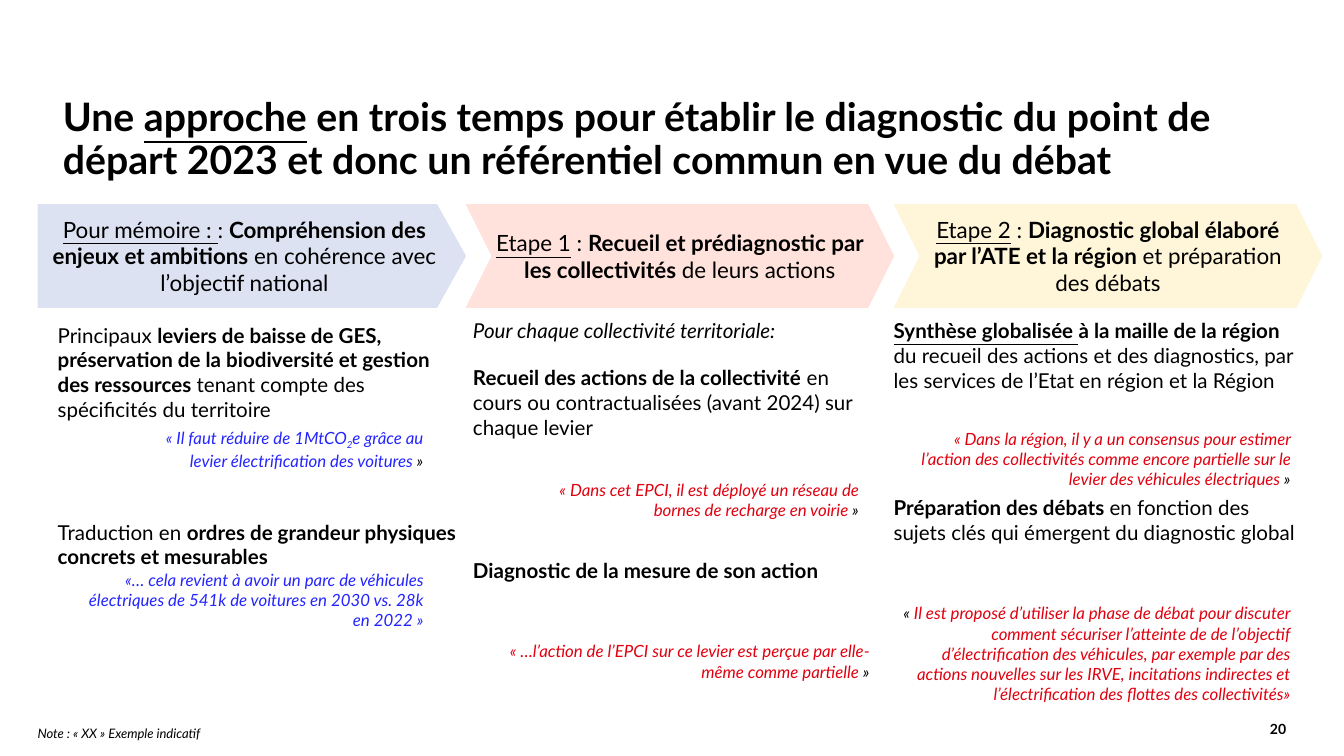
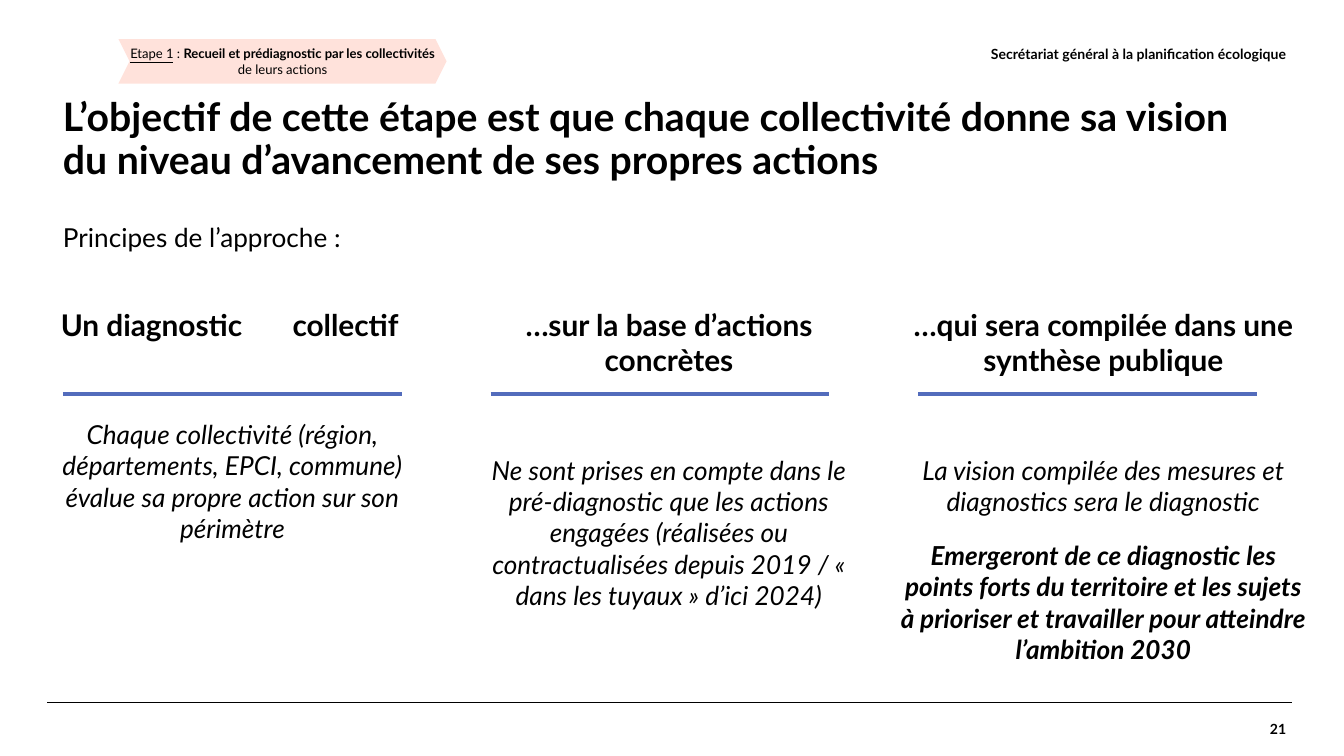
from dataclasses import dataclass
from typing import NamedTuple

from lxml import etree
from pptx import Presentation
from pptx.dml.color import RGBColor
from pptx.enum.shapes import MSO_CONNECTOR, MSO_SHAPE
from pptx.enum.text import MSO_ANCHOR, PP_ALIGN
from pptx.oxml.ns import qn
from pptx.util import Cm, Pt

LEFT, CENTER, RIGHT = PP_ALIGN.LEFT, PP_ALIGN.CENTER, PP_ALIGN.RIGHT
TOP, MIDDLE = MSO_ANCHOR.TOP, MSO_ANCHOR.MIDDLE
PENTAGON, CHEVRON = MSO_SHAPE.PENTAGON, MSO_SHAPE.CHEVRON
STRAIGHT = MSO_CONNECTOR.STRAIGHT

FONT = "Lato"
COLORS = {
    "ink": "000000",
    "national": "2424FF",
    "local": "E1000F",
    "rule": "536CBC",
    "lavender": "DDE2F2",
    "pink": "FFE2DB",
    "cream": "FFF5D9",
}
NO_MARGINS = (0, 0, 0, 0)


class Box(NamedTuple):
    left: float
    top: float
    width: float
    height: float


class Span(NamedTuple):
    text: str
    bold: bool = False
    italic: bool = False
    underline: bool = False
    color: str = "ink"
    subscript: bool = False


@dataclass(frozen=True)
class Block:
    spans: tuple[Span, ...]
    size: float
    align: PP_ALIGN = LEFT
    before: float = 0
    after: float = 0
    line_spacing: float | None = None
    tabs: tuple[float, ...] = ()


@dataclass(frozen=True)
class Phase:
    box: Box
    geometry: MSO_SHAPE
    adjustment: float
    fill: str
    spans: tuple[Span, ...]
    size: float = 12
    margins: tuple[float, ...] = (0, 0.13, 0, 0.13)


@dataclass(frozen=True)
class TextColumn:
    box: Box
    blocks: tuple[Block, ...]


def color(name: str) -> RGBColor:
    return RGBColor.from_string(COLORS[name])


def quote(text: str, tint: str) -> Span:
    return Span(text, italic=True, color=tint)


def body(*spans: Span, before: float = 0) -> Block:
    return Block(spans, 11, before=before, after=8)


def heading(text: str, **layout) -> Block:
    return Block((Span(text, bold=True),), 16, **{"align": CENTER, "after": 8, **layout})


def principle(text: str, bold: bool = False, before: float = 32.8) -> Block:
    return Block((Span(text, bold, True),), 14, CENTER, before, 8)


def write(paragraph, text: str, *, size: float, bold: bool = False, italic: bool = False,
          underline: bool = False, tint: str = "ink", subscript: bool = False) -> None:
    run = paragraph.add_run()
    run.text = text
    font = run.font
    font.name, font.size = FONT, Pt(size)
    font.bold, font.italic, font.underline = bold, italic, underline
    font.color.rgb = color(tint)
    if subscript:
        run._r.get_or_add_rPr().set("baseline", "-25000")


def fill_frame(frame, blocks: tuple[Block, ...], anchor: MSO_ANCHOR = TOP,
               margins: tuple[float, ...] = NO_MARGINS) -> None:
    frame.word_wrap = True
    frame.vertical_anchor = anchor
    (frame.margin_left, frame.margin_top,
     frame.margin_right, frame.margin_bottom) = map(Cm, margins)
    for index, block in enumerate(blocks):
        paragraph = frame.add_paragraph() if index else frame.paragraphs[0]
        paragraph.alignment = block.align
        paragraph.space_before, paragraph.space_after = Pt(block.before), Pt(block.after)
        if block.line_spacing:
            paragraph.line_spacing = block.line_spacing
        if block.tabs:
            tab_list = etree.SubElement(paragraph._p.get_or_add_pPr(), qn("a:tabLst"))
            for position in block.tabs:
                etree.SubElement(tab_list, qn("a:tab"), pos=str(Cm(position)), algn="l")
        for span in block.spans:
            write(paragraph, span.text, size=block.size, bold=span.bold, italic=span.italic,
                  underline=span.underline, tint=span.color, subscript=span.subscript)


def add_text(slide, box: Box, *blocks: Block, anchor: MSO_ANCHOR = TOP,
             margins: tuple[float, ...] = NO_MARGINS) -> None:
    shape = slide.shapes.add_textbox(*map(Cm, box))
    fill_frame(shape.text_frame, blocks, anchor, margins)


def add_phase(slide, phase: Phase) -> None:
    shape = slide.shapes.add_shape(phase.geometry, *map(Cm, phase.box))
    shape.shadow.inherit = False
    shape.adjustments[0] = phase.adjustment
    shape.fill.solid()
    shape.fill.fore_color.rgb = color(phase.fill)
    shape.line.fill.background()
    fill_frame(shape.text_frame, (Block(phase.spans, phase.size, CENTER),),
               MIDDLE, phase.margins)


def add_rule(slide, left: float, top: float, width: float, tint: str, weight: float) -> None:
    rule = slide.shapes.add_connector(STRAIGHT, Cm(left), Cm(top), Cm(left + width), Cm(top))
    rule.line.color.rgb = color(tint)
    rule.line.width = Pt(weight)
    etree.SubElement(rule._element.spPr, qn("a:effectLst"))


def add_title(slide, width: float, *spans: Span) -> None:
    add_text(slide, Box(0.89, 1.9, width, 1.5), Block(spans, 21, line_spacing=0.9),
             anchor=MIDDLE, margins=(0.3, 0.13, 0.25, 0.13))


def add_label(slide, box: Box, text: str) -> None:
    add_text(slide, box, Block((Span(text, bold=True),), 7.5, RIGHT), anchor=MIDDLE)


def add_page_number(slide, number: int) -> None:
    add_label(slide, Box(20.55, 13.28, 3.76, 0.99), str(number))


def phase_box(index: int) -> Box:
    return Box(0.71 + 8.09 * index, 3.86, 8.1, 1.96)


STEP_ONE = (
    Span("Etape 1", underline=True),
    Span(" : "),
    Span("Recueil et prédiagnostic par les collectivités ", bold=True),
    Span("de leurs actions"),
)

PHASES = (
    Phase(phase_box(0), PENTAGON, 0.28, "lavender", (
        Span("Pour mémoire : ", underline=True),
        Span(": "),
        Span("Compréhension des enjeux et ambitions ", bold=True),
        Span("en cohérence avec l’objectif national"),
    ), margins=(0.1, 0.13, 0.1, 0.13)),
    Phase(phase_box(1), CHEVRON, 0.25, "pink", STEP_ONE),
    Phase(phase_box(2), CHEVRON, 0.25, "cream", (
        Span("Etape 2", underline=True),
        Span(" : "),
        Span("Diagnostic global élaboré par l’ATE et la région ", bold=True),
        Span("et préparation des débats"),
    ), margins=(0.25, 0.13, 0.25, 0.13)),
)

PHASE_COLUMNS = (
    TextColumn(Box(1.09, 6.1, 7.7, 5.59), (
        body(Span("Principaux "),
             Span("leviers de baisse de GES, préservation de la biodiversité et gestion "
                  "des ressources ", bold=True),
             Span("tenant compte des spécificités du territoire")),
        body(Span("Traduction en "),
             Span("ordres de grandeur physiques concrets et mesurables", bold=True),
             before=44.8),
    )),
    TextColumn(Box(8.94, 6.02, 7.49, 6.93), (
        body(Span("Pour chaque collectivité territoriale:", italic=True)),
        body(Span("Recueil des actions de la collectivité", bold=True),
             Span(" en cours ou contractualisées (avant 2024) sur chaque levier"),
             before=4),
        body(Span("Diagnostic de la mesure de son action", bold=True), before=55.6),
    )),
    TextColumn(Box(16.89, 6.02, 7.8, 5.59), (
        body(Span("Synthèse globalisée ", bold=True, underline=True),
             Span("à la maille de la région ", bold=True),
             Span("du recueil des actions et des diagnostics, par les services de l’Etat "
                  "en région et la Région")),
        body(Span("Préparation des débats ", bold=True),
             Span("en fonction des sujets clés qui émergent du diagnostic global"),
             before=47.2),
    )),
)

QUOTES = (
    (Box(2.74, 8.08, 5.26, 1.57), (
        quote("« Il faut réduire de 1MtCO", "national"),
        Span("2", italic=True, color="national", subscript=True),
        quote("e grâce au levier électrification des voitures", "national"),
        quote(" »", "ink"))),
    (Box(1.6, 10.77, 6.4, 1.57), (
        quote("«… cela revient à avoir un parc de véhicules électriques de 541k de voitures "
              "en 2030 vs. 28k en 2022 »", "national"),)),
    (Box(9.83, 9.07, 6.4, 1.07), (
        quote("« Dans cet EPCI, il est déployé un réseau de bornes de recharge en voirie ",
              "local"),
        quote("»", "ink"))),
    (Box(8.94, 12.12, 7.49, 1.17), (
        quote("« …l’action de l’EPCI sur ce levier est perçue par elle-même comme partielle",
              "local"),
        quote(" »", "ink"))),
    (Box(17.15, 8.1, 7.24, 1.57), (
        quote("« Dans la région, il y a un consensus pour estimer l’action des collectivités "
              "comme encore partielle sur le levier des véhicules électriques", "local"),
        quote(" »", "ink"))),
    (Box(16.99, 11.4, 7.39, 1.57), (
        quote("« ", "ink"),
        quote("Il est proposé d’utiliser la phase de débat pour discuter comment sécuriser "
              "l’atteinte de de l’objectif d’électrification des véhicules, par exemple par "
              "des actions nouvelles sur les IRVE, incitations indirectes et "
              "l’électrification des flottes des collectivités»", "local"))),
)

PRINCIPLE_COLUMNS = (
    TextColumn(Box(0.89, 5.79, 7.01, 8), (
        heading("\tUn diagnostic\tcollectif", align=LEFT, tabs=(0.26, 4.64)),
        principle("Chaque collectivité (région, départements, EPCI, commune) évalue "
                  "sa propre action sur son périmètre"),
    )),
    TextColumn(Box(9.14, 5.79, 7.01, 8), (
        heading("…sur la base d’actions concrètes"),
        principle("Ne sont prises en compte dans le pré-diagnostic que les actions engagées "
                  "(réalisées ou contractualisées depuis 2019 / « dans les tuyaux » "
                  "d’ici 2024)"),
    )),
    TextColumn(Box(17.02, 5.79, 7.67, 8), (
        heading("…qui sera compilée dans une synthèse publique"),
        principle("La vision compilée des mesures et diagnostics sera le diagnostic"),
        principle("Emergeront de ce diagnostic les points forts du territoire et les sujets "
                  "à prioriser et travailler pour atteindre l’ambition 2030",
                  bold=True, before=4),
    )),
)


def build_approach(slide) -> None:
    add_title(slide, 24.08, Span("Une ", bold=True), Span("approche", bold=True, underline=True),
              Span(" en trois temps pour établir le diagnostic du point de départ 2023 "
                   "et donc un référentiel commun en vue du débat", bold=True))
    for phase in PHASES:
        add_phase(slide, phase)
    for column in PHASE_COLUMNS:
        add_text(slide, column.box, *column.blocks)
    for box, spans in QUOTES:
        add_text(slide, box, Block(spans, 9, RIGHT, after=8))
    add_text(slide, Box(0.71, 13.72, 5.26, 0.3),
             Block((Span("Note : « XX » Exemple indicatif", italic=True),), 7))
    add_page_number(slide, 20)


def build_principles(slide) -> None:
    add_rule(slide, 0.89, 13.28, 23.52, "ink", 0.8)
    add_label(slide, Box(7.98, 0.53, 16.33, 0.99),
              "Secrétariat général à la planification écologique")
    add_title(slide, 23.39, Span("L’objectif de cette étape est que chaque collectivité donne "
                                 "sa vision du niveau d’avancement de ses propres actions",
                                 bold=True))
    add_text(slide, Box(0.94, 4.19, 23.39, 1.04),
             Block((Span("Principes de l’approche :"),), 14), margins=(0.25, 0, 0, 0))
    for index, column in enumerate(PRINCIPLE_COLUMNS):
        add_text(slide, column.box, *column.blocks)
        add_rule(slide, 1.19 + 8.08 * index, 7.44, 6.4, "rule", 2.25)
    add_phase(slide, Phase(Box(2.24, 0.74, 6.2, 0.84), CHEVRON, 0.25, "pink", STEP_ONE, 7))
    add_page_number(slide, 21)


def main() -> None:
    presentation = Presentation()
    presentation.slide_width, presentation.slide_height = Cm(25.4), Cm(14.29)
    for build in (build_approach, build_principles):
        build(presentation.slides.add_slide(presentation.slide_layouts[6]))
    presentation.save("out.pptx")


if __name__ == "__main__":
    main()
